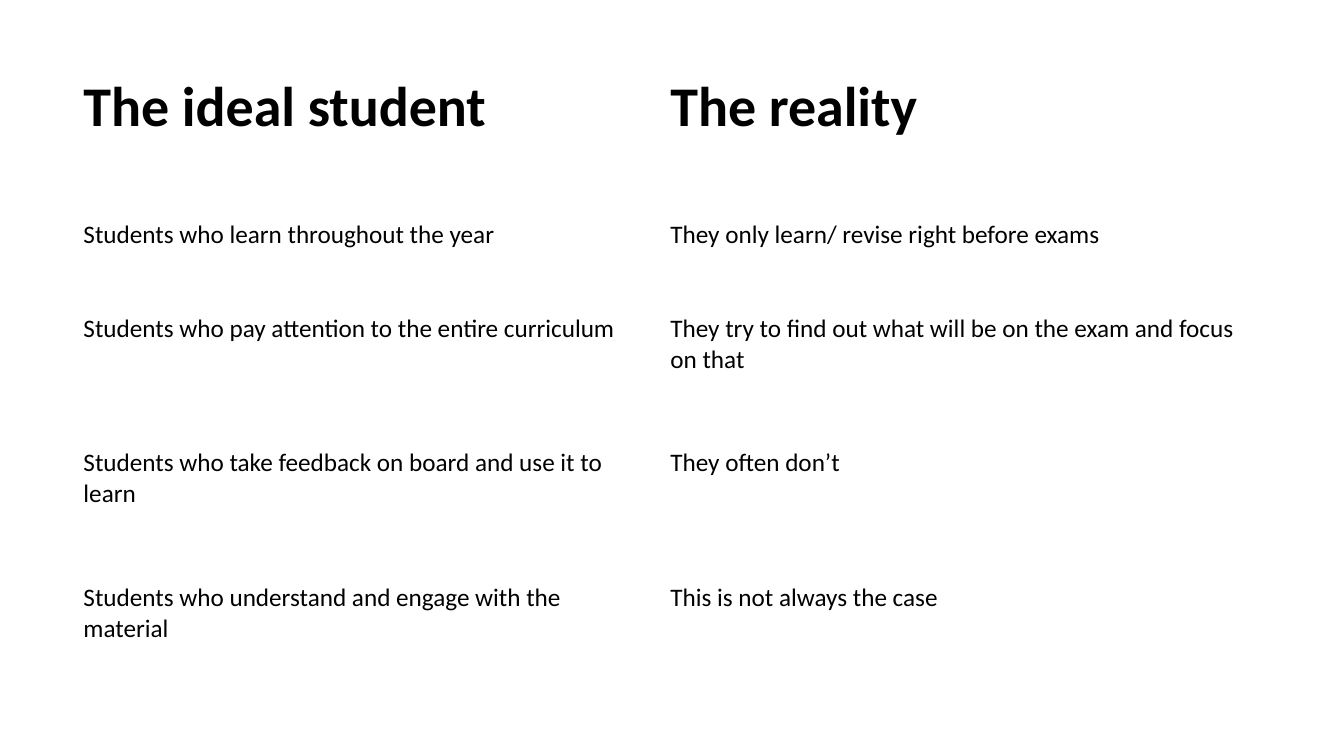
"""Build a slide with a table comparing the ideal student with the reality."""
from pptx import Presentation
from pptx.dml.color import RGBColor
from pptx.util import Cm, Pt

BLACK = RGBColor(0x00, 0x00, 0x00)
ROWS = [
    ("The ideal student", "The reality"),
    ("Students who learn throughout the year",
     "They only learn/ revise right before exams"),
    ("Students who pay attention to the entire curriculum",
     "They try to find out what will be on the exam and focus on that"),
    ("Students who take feedback on board and use it to learn",
     "They often don’t"),
    ("Students who understand and engage with the material",
     "This is not always the case"),
]
HEIGHTS = [3.68, 2.36, 3.39, 3.39, 3.39]
COL_WIDTH = 14.79


def write(cell, text, size=18, bold=False):
    cell.fill.background()
    p = cell.text_frame.paragraphs[0]
    r = p.add_run()
    r.text = text
    r.font.name = "Calibri"
    r.font.size = Pt(size)
    r.font.bold = bold
    r.font.color.rgb = BLACK


prs = Presentation()
prs.slide_width = Cm(33.87)
prs.slide_height = Cm(19.05)
s = prs.slides.add_slide(prs.slide_layouts[6])

table = s.shapes.add_table(len(ROWS), 2, Cm(1.85), Cm(1.73),
                           Cm(2 * COL_WIDTH), Cm(sum(HEIGHTS))).table
table.first_row = False
table.horz_banding = False
for col in table.columns:
    col.width = Cm(COL_WIDTH)

for i, (texts, height) in enumerate(zip(ROWS, HEIGHTS)):
    table.rows[i].height = Cm(height)
    for j, text in enumerate(texts):
        if i == 0:
            write(table.cell(i, j), text, size=40, bold=True)
        else:
            write(table.cell(i, j), text)

prs.save("out.pptx")
